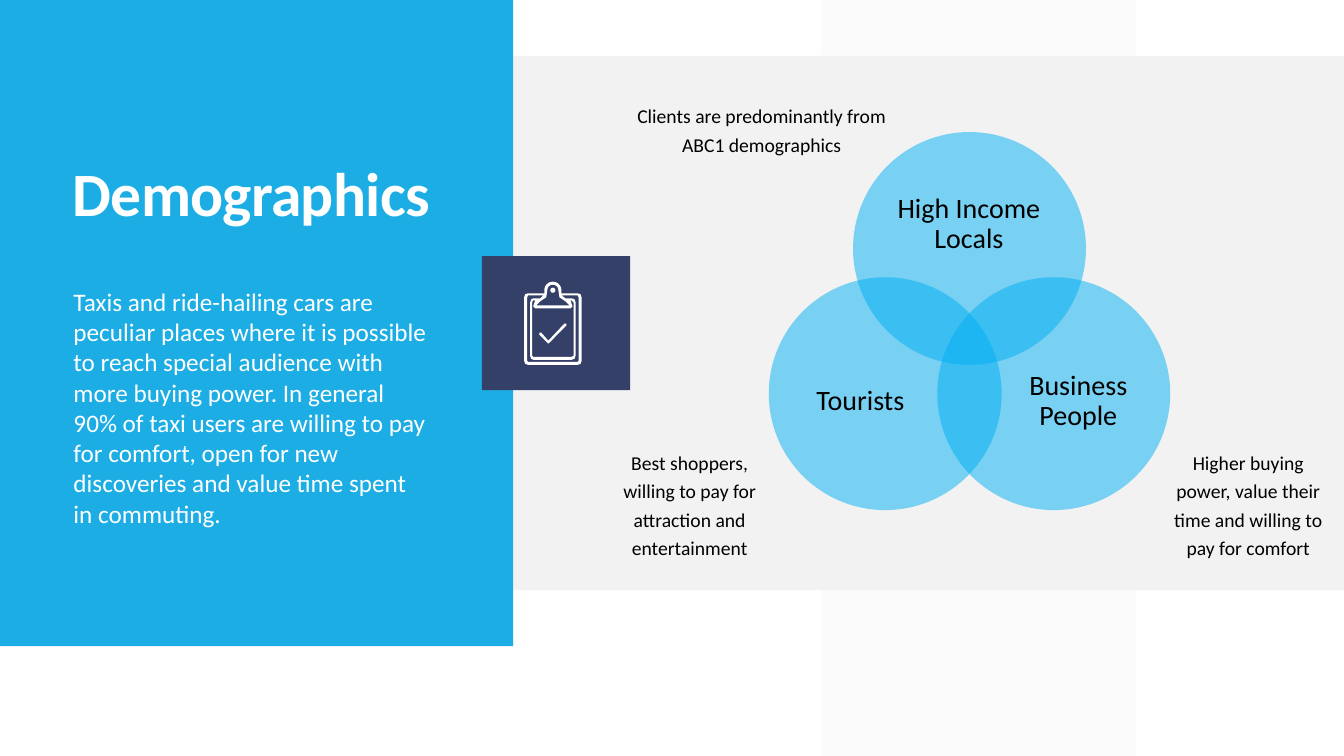
from dataclasses import dataclass
from math import cos, radians, sin

from lxml import etree
from pptx import Presentation
from pptx.dml.color import RGBColor
from pptx.enum.shapes import MSO_SHAPE
from pptx.enum.text import MSO_ANCHOR, MSO_AUTO_SIZE, PP_ALIGN
from pptx.oxml.ns import qn
from pptx.util import Emu, Inches, Pt

RECT, OVAL = MSO_SHAPE.RECTANGLE, MSO_SHAPE.OVAL
TOP, MIDDLE = MSO_ANCHOR.TOP, MSO_ANCHOR.MIDDLE
LEFT, CENTER = PP_ALIGN.LEFT, PP_ALIGN.CENTER
GROW, FIXED = MSO_AUTO_SIZE.SHAPE_TO_FIT_TEXT, MSO_AUTO_SIZE.NONE
WIDE, HIGH = Inches(13.333), Inches(7.5)
FONT = "Calibri"
WHITE, BLACK, GREY, BLUE, NAVY, SKY = "FFFFFF", "000000", "F2F2F2", "1CADE4", "344068", "00AFF2"


@dataclass
class Box:
    left: float
    top: float
    width: float
    height: float

    def frame(self) -> tuple[Emu, Emu, Emu, Emu]:
        return (across(self.left), down(self.top), across(self.width), down(self.height))


@dataclass
class Style:
    size: int
    color: str = BLACK
    align: PP_ALIGN = CENTER
    anchor: MSO_ANCHOR = TOP
    lines: float = 1.0
    before: int = 0
    after: int = 0
    bold: bool = False
    inset: bool = True
    fit: MSO_AUTO_SIZE = FIXED


@dataclass
class Panel:
    box: Box
    color: str
    share: int = 100


@dataclass
class Group:
    text: str
    left: float
    top: float
    label: Box
    note: str
    place: Box


def across(share: float) -> Emu:
    return Emu(round(WIDE * share / 100))


def down(share: float) -> Emu:
    return Emu(round(HIGH * share / 100))


def paint(shape, color: str, share: int = 100) -> None:
    shape.shadow.inherit = False
    shape.fill.solid()
    shape.fill.fore_color.rgb = RGBColor.from_string(color)
    shape.line.fill.background()
    if share < 100:
        tone = shape.element.spPr.find(qn("a:solidFill")).find(qn("a:srgbClr"))
        etree.SubElement(tone, qn("a:alpha")).set("val", str(share * 1000))


def draw(shapes, kind: MSO_SHAPE, panel: Panel) -> None:
    paint(shapes.add_shape(kind, *panel.box.frame()), panel.color, panel.share)


def write(shape, text: str, style: Style):
    frame = shape.text_frame
    frame.word_wrap = True
    frame.auto_size = style.fit
    frame.vertical_anchor = style.anchor
    if not style.inset:
        frame.margin_left = frame.margin_right = frame.margin_top = frame.margin_bottom = 0
    frame.text = text
    para = frame.paragraphs[0]
    para.alignment = style.align
    para.line_spacing = style.lines
    para.space_before, para.space_after = Pt(style.before), Pt(style.after)
    para.font.name, para.font.size, para.font.bold = FONT, Pt(style.size), style.bold
    para.font.color.rgb = RGBColor.from_string(style.color)
    return para


def label(shapes, box: Box, text: str, style: Style) -> None:
    write(shapes.add_textbox(*box.frame()), text, style)


def arc(radius: float, first: int, last: int) -> list[tuple[float, float]]:
    return [(28.5 + radius * cos(radians(turn)), 9 + radius * sin(radians(turn)))
            for turn in range(first, last + 1, 15)]


def outline(shapes, left: float, top: float, loops: list) -> None:
    pen = None
    for loop in loops:
        points = [(x * 10, y * 10) for x, y in loop]
        if pen is None:
            pen = shapes.build_freeform(*points[0], scale=914.4)
        else:
            pen.move_to(*points[0])
        pen.add_line_segments(points[1:], close=True)
    paint(pen.convert_to_shape(across(left), down(top)), WHITE)


PANELS = [
    Panel(Box(61.12, 0, 23.4, 100), GREY, 30),
    Panel(Box(38.18, 7.4, 61.82, 70.67), GREY),
    Panel(Box(0, 0, 38.18, 85.47), BLUE),
    Panel(Box(35.86, 33.87, 11.03, 17.73), NAVY),
]
MID, STEP = 63.47, 6.27
HEAD = Box(4.65, 10.8, 28.88, 30.53)
BODY = Box(4.73, 37.2, 27.76, 36.4)
GROUPS = [
    Group("High Income Locals", MID, 17.47, Box(65.72, 22.8, 12.75, 13.87),
          "Clients are predominantly from ABC1 demographics", Box(45.76, 12.53, 21.83, 8.67)),
    Group("Business People", MID + STEP, 36.67, Box(75.02, 44.67, 10.43, 16.93),
          "Higher buying power, value their time and willing to pay for comfort",
          Box(86.05, 58.4, 13.65, 16.13)),
    Group("Tourists", MID - STEP, 36.67, Box(58.81, 44.67, 10.43, 16.93),
          "Best shoppers, willing to pay for attraction and entertainment",
          Box(44.49, 58.4, 13.65, 16.13)),
]
STORY = ("Taxis and ride-hailing cars are peculiar places where it is possible to reach special "
         "audience with more buying power. In general 90% of taxi users are willing to pay for "
         "comfort, open for new discoveries and value time spent in commuting.")
BOARD = [
    [(0, 16), (1, 13), (4, 12), (20, 12), *arc(8.5, 180, 360), (37, 12), (53, 12), (56, 13),
     (57, 16), (57, 79), (56, 82), (53, 83), (4, 83), (1, 82), (0, 79)],
    [(54, 16), (54, 79), (53, 80), (4, 80), (3, 79), (3, 16), (4, 14), (19, 14), (16, 17),
     (9, 17), (7, 18), (6, 21), (6, 74), (7, 77), (9, 78), (47, 78), (50, 77), (51, 74),
     (51, 21), (50, 18), (47, 17), (41, 17), (37, 14), (53, 14)],
    [(11, 27), (46, 27), (48, 25), (46, 19), (47, 19), (49, 21), (49, 74), (47, 75), (9, 75),
     (8, 74), (8, 21), (9, 19), (11, 19), (9, 25)],
    [*arc(5.5, 180, 360), (35, 16), (41, 20), (45, 24), (12, 24), (16, 20), (22, 16)],
    arc(2.5, 0, 345),
    [(23, 61), (24, 62), (25, 61), (42, 44), (42, 42), (40, 42), (24, 59), (17, 51), (15, 51),
     (15, 53)],
]


def main() -> None:
    deck = Presentation()
    deck.slide_width, deck.slide_height = WIDE, HIGH
    slide = deck.slides.add_slide(deck.slide_layouts[5])
    shapes = slide.shapes
    for panel in PANELS:
        draw(shapes, RECT, panel)

    title = shapes.title
    title.left, title.top, title.width, title.height = HEAD.frame()
    shapes[-1].element.addnext(title.element)
    para = write(title, "Demographics", Style(44, WHITE, LEFT, MIDDLE, 0.9, bold=True))
    para._p.pPr.find(qn("a:defRPr")).set("spc", "-50")
    outline(shapes, 39, 37.2, BOARD)

    venn = shapes.add_group_shape().shapes
    name = Style(20, anchor=MIDDLE, lines=0.9, after=7, inset=False)
    for group in GROUPS:
        draw(venn, OVAL, Panel(Box(group.left, group.top, 17.33, 30.8), SKY, 50))
        label(venn, group.label, group.text, name)
    for group in GROUPS:
        label(shapes, group.place, group.note, Style(14, lines=1.2, before=6, fit=GROW))
    label(shapes, BODY, STORY, Style(18, WHITE, LEFT, before=12, after=2))
    deck.save("out.pptx")


if __name__ == "__main__":
    main()
